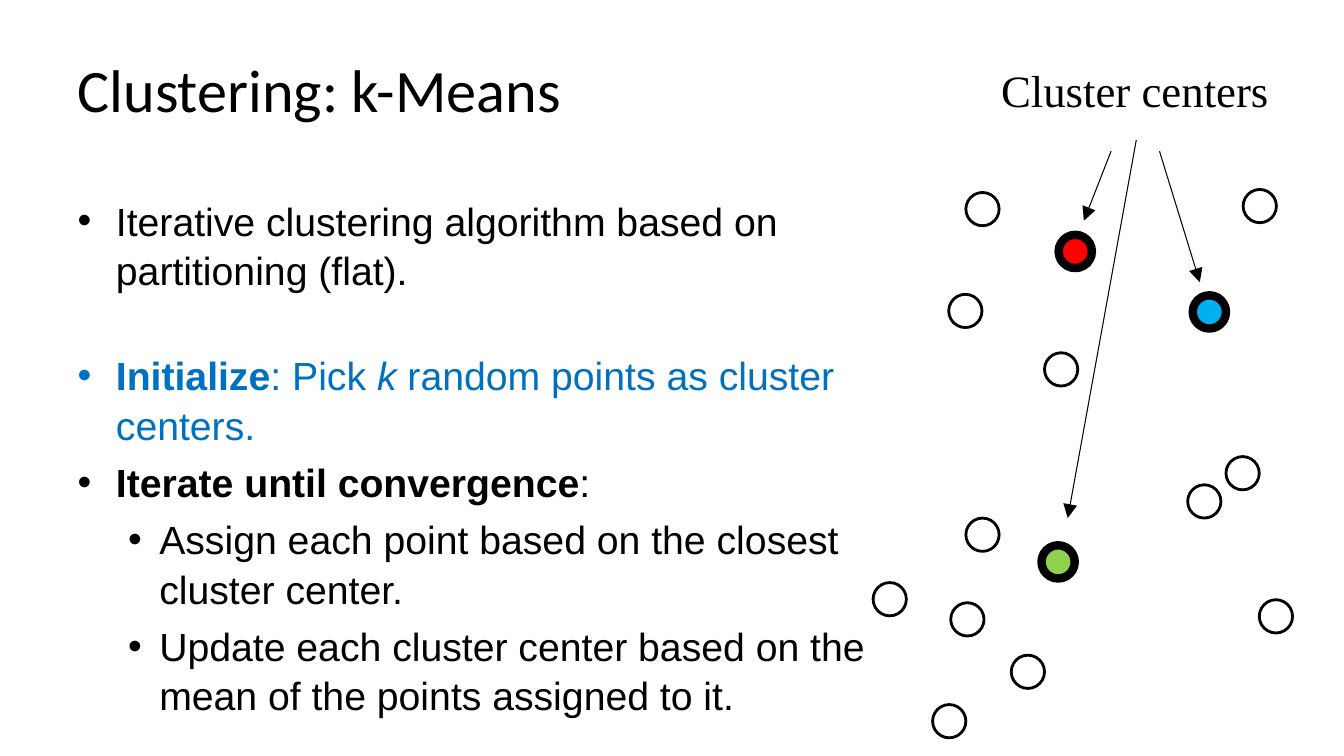
from lxml.etree import SubElement
from pptx import Presentation
from pptx.dml.color import RGBColor
from pptx.enum.shapes import MSO_CONNECTOR, MSO_SHAPE
from pptx.enum.text import MSO_ANCHOR, MSO_AUTO_SIZE, PP_ALIGN
from pptx.oxml.ns import qn
from pptx.util import Inches, Pt

COLORS = {"black": "000000", "white": "FFFFFF", "accent": "0070C0",
          "red": "FF0000", "blue": "00B0F0", "green": "92D050"}

TITLE = "Clustering: k-Means"
LABEL = "Cluster centers"

BULLETS = [
    (0, "black", 0, [("Iterative clustering algorithm based on partitioning (flat).", "")]),
    (0, "accent", 38.5, [("Initialize", "bold"), (": Pick ", ""), ("k", "italic"),
                         (" random points as cluster centers.", "")]),
    (0, "black", 4.2, [("Iterate until convergence", "bold"), (":", "")]),
    (1, "black", 4.2, [("Assign each point based on the closest cluster center.", "")]),
    (1, "black", 4.2, [("Update each cluster center based on the mean of the points "
                        "assigned to it.", "")]),
]
INDENTS = [(0.38, -0.38), (0.81, -0.31)]

POINTS = [(9.41, 2.92), (10.36, 3.5), (12.16, 4.53), (8.66, 5.78), (10.03, 6.5),
          (12.49, 5.95), (12.33, 1.88), (9.58, 1.91), (9.58, 5.14), (11.78, 4.81),
          (9.43, 5.98), (9.25, 6.99)]
CENTERS = [(10.5, 2.33, "red"), (11.83, 2.93, "blue"), (10.33, 5.41, "green")]
ARROWS = [((11.5, 1.5), (11.9, 2.8)), ((11.02, 1.5), (10.75, 2.19)),
          ((11.27, 1.39), (10.59, 5.14))]
DIAMETER = 0.33


def color(name):
    return RGBColor.from_string(COLORS[name])


def place(shape, left, top, width, height):
    shape.left, shape.top = Inches(left), Inches(top)
    shape.width, shape.height = Inches(width), Inches(height)


def add_span(para, text, font, size, shade="black", style=""):
    span = para.add_run()
    span.text = text
    span.font.name, span.font.size = font, Pt(size)
    span.font.color.rgb = color(shade)
    span.font.bold = style == "bold"
    span.font.italic = style == "italic"


def add_bullet(para, level):
    margin, indent = INDENTS[level]
    para.level = level
    properties = para._p.get_or_add_pPr()
    properties.set("marL", str(Inches(margin)))
    properties.set("indent", str(Inches(indent)))
    SubElement(properties, qn("a:buFont")).set("typeface", "Arial")
    SubElement(properties, qn("a:buChar")).set("char", "•")


def add_circle(page, left, top, fill, weight):
    circle = page.shapes.add_shape(MSO_SHAPE.OVAL, Inches(left), Inches(top),
                                   Inches(DIAMETER), Inches(DIAMETER))
    circle.shadow.inherit = False
    circle.fill.solid()
    circle.fill.fore_color.rgb = color(fill)
    circle.line.color.rgb = color("black")
    circle.line.width = Pt(weight)


def add_arrow(page, start, end):
    arrow = page.shapes.add_connector(MSO_CONNECTOR.STRAIGHT,
                                      *[Inches(value) for value in start + end])
    arrow.line.color.rgb = color("black")
    arrow.line.width = Pt(0.75)
    head = SubElement(arrow.line._get_or_add_ln(), qn("a:tailEnd"))
    for name, value in (("type", "triangle"), ("w", "lg"), ("len", "lg")):
        head.set(name, value)
    SubElement(arrow._element.spPr, qn("a:effectLst"))


def add_title(page):
    title = page.shapes.title
    place(title, 0.67, 0.25, 12.42, 1.25)
    title.text_frame.auto_size = MSO_AUTO_SIZE.NONE
    title.text_frame.vertical_anchor = MSO_ANCHOR.MIDDLE
    para = title.text_frame.paragraphs[0]
    para.alignment = PP_ALIGN.LEFT
    add_span(para, TITLE, "Calibri", 43)


def add_body(page):
    body = page.placeholders[1]
    place(body, 0.67, 1.88, 8.92, 4.95)
    frame = body.text_frame
    frame.auto_size = MSO_AUTO_SIZE.NONE
    frame.vertical_anchor = MSO_ANCHOR.TOP
    for index, (level, shade, before, spans) in enumerate(BULLETS):
        para = frame.paragraphs[0] if index == 0 else frame.add_paragraph()
        add_bullet(para, level)
        para.line_spacing = 1.05
        para.space_before, para.space_after = Pt(before), Pt(1.4)
        for text, style in spans:
            add_span(para, text, "Arial", 28, shade, style)


def add_label(page):
    box = page.shapes.add_textbox(Inches(9.83), Inches(0.57), Inches(2.88), Inches(0.64))
    box.text_frame.word_wrap = False
    add_span(box.text_frame.paragraphs[0], LABEL, "Times New Roman", 32)


def main():
    deck = Presentation()
    deck.slide_width, deck.slide_height = Inches(13.33), Inches(7.5)
    page = deck.slides.add_slide(deck.slide_layouts[1])
    add_title(page)
    add_body(page)
    for left, top in POINTS:
        add_circle(page, left, top, "white", 2)
    for left, top, fill in CENTERS:
        add_circle(page, left, top, fill, 6)
    for start, end in ARROWS:
        add_arrow(page, start, end)
    add_label(page)
    deck.save("out.pptx")


if __name__ == "__main__":
    main()
